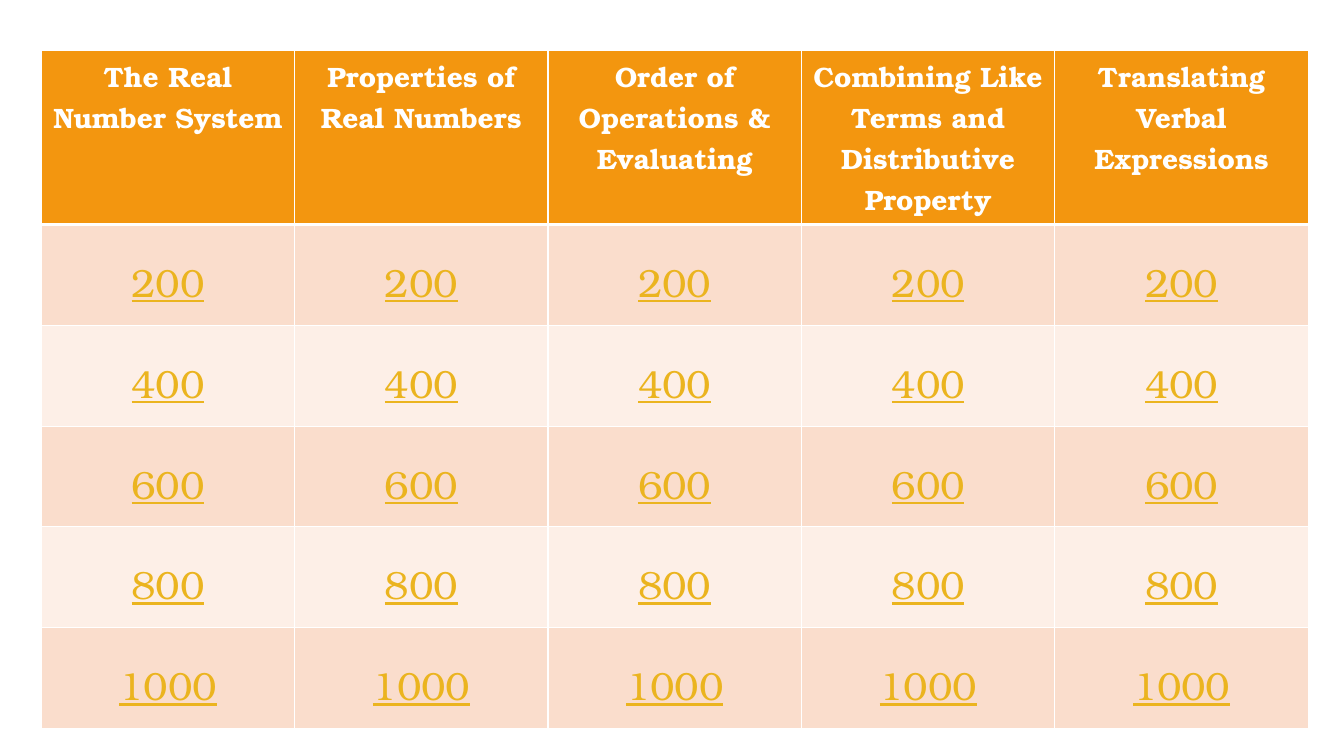
import pptx
import pptx.dml.color
import pptx.enum.text
import pptx.oxml
import pptx.oxml.ns
import pptx.util
from dataclasses import dataclass

Pt = pptx.util.Pt
Color = pptx.dml.color.RGBColor.from_string


@dataclass(frozen=True)
class Theme:
    font: str = "TeX Gyre Bonum"
    white: str = "FFFFFF"
    header: str = "F3960F"
    bands: tuple = ("FADDCC", "FDEFE7")
    points: str = "EBB41F"
    header_size: int = 20
    points_size: int = 28
    thin: int = 1
    thick: int = 3


theme = Theme()

# Wording: one inner list per category, one entry per paragraph
categories = [
    ["The Real Number System"],
    ["Properties of Real Numbers"],
    ["Order of Operations &", "Evaluating"],
    ["Combining Like Terms and", "Distributive Property"],
    ["Translating Verbal Expressions"],
]
board = [categories] + [[[str(value)]] * len(categories) for value in range(200, 1001, 200)]

header_format = {"size": Pt(theme.header_size), "bold": True, "underline": False}
points_format = {"size": Pt(theme.points_size), "bold": False, "underline": True}


def add_border(cell, side, width):
    properties = cell._tc.get_or_add_tcPr()
    properties.append(pptx.oxml.parse_xml(
        f'<a:{side} {pptx.oxml.ns.nsdecls("a")} w="{Pt(width)}">'
        f'<a:solidFill><a:srgbClr val="{theme.white}"/></a:solidFill></a:{side}>'))


# Deck and page
deck = pptx.Presentation()
deck.slide_width, deck.slide_height = Pt(960), Pt(540)
page = deck.slides.add_slide(deck.slide_layouts[6])

# Game board
column_width, header_height, row_height = 181, 106.5, 72
table = page.shapes.add_table(
    len(board), len(categories), Pt(29.5), Pt(36),
    Pt(column_width * len(categories)),
    Pt(header_height + row_height * (len(board) - 1))).table
for column in table.columns:
    column.width = Pt(column_width)
for index, row in enumerate(table.rows):
    row.height = Pt(row_height if index else header_height)

# Cells
for row_index, entries in enumerate(board):
    is_header = row_index == 0
    fill = theme.header if is_header else theme.bands[(row_index - 1) % 2]
    text_color = theme.white if is_header else theme.points
    text_format = header_format if is_header else points_format
    borders = {
        "lnL": theme.thin,
        "lnR": theme.thin,
        "lnT": theme.thick if row_index == 1 else theme.thin,
        "lnB": theme.thick if is_header else theme.thin,
    }
    for column_index, lines in enumerate(entries):
        cell = table.cell(row_index, column_index)
        for side, width in borders.items():
            add_border(cell, side, width)
        cell.fill.solid()
        cell.fill.fore_color.rgb = Color(fill)
        cell.text_frame.text = "\n".join(lines)
        for para in cell.text_frame.paragraphs:
            para.alignment = pptx.enum.text.PP_ALIGN.CENTER
            if not is_header:
                para.line_spacing = 1.5
            for span in para.runs:
                span.font.name = theme.font
                span.font.color.rgb = Color(text_color)
                for name, value in text_format.items():
                    setattr(span.font, name, value)

deck.save("out.pptx")
